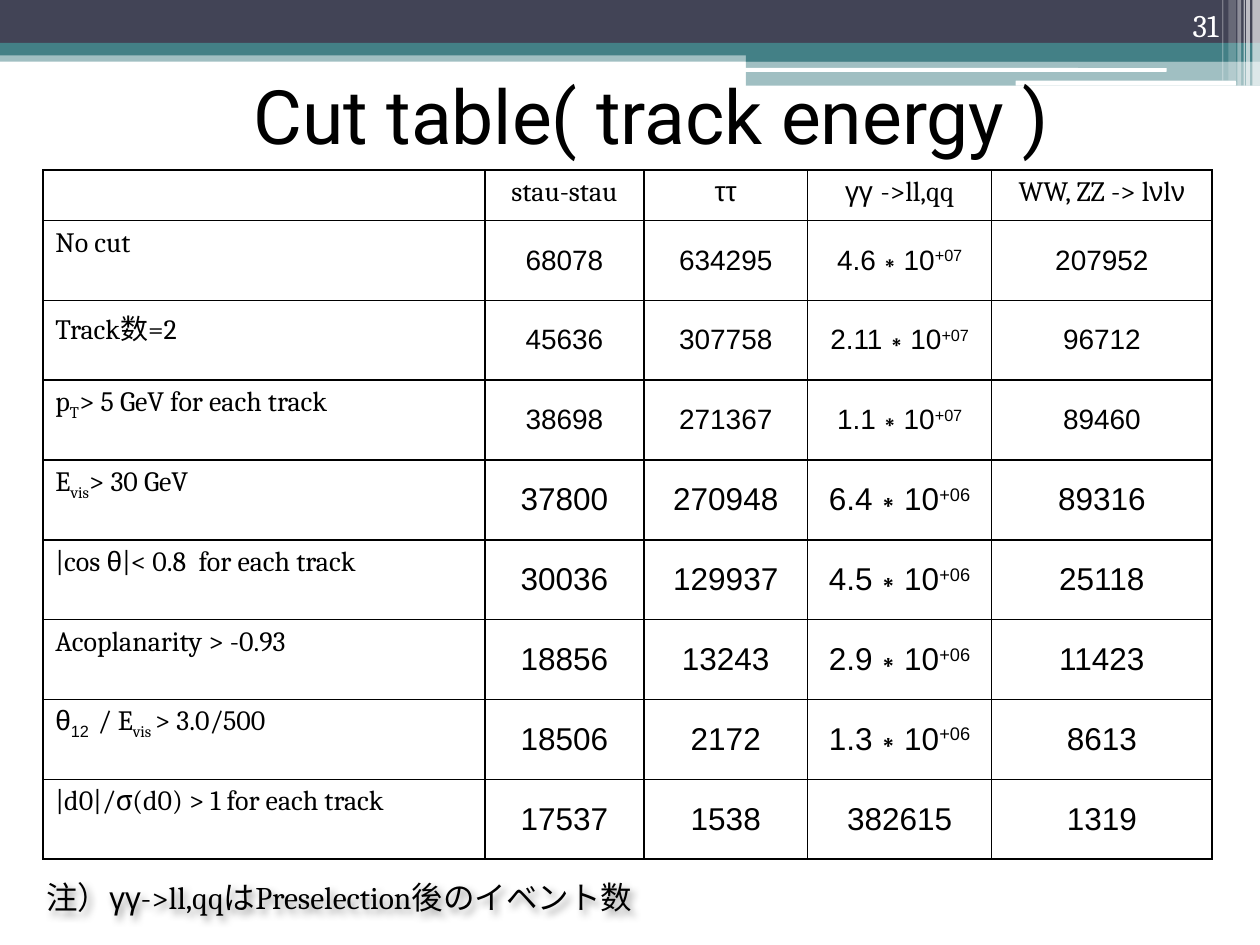
from lxml import etree
from pptx import Presentation
from pptx.dml.color import RGBColor
from pptx.enum.shapes import MSO_SHAPE as SHAPE
from pptx.enum.text import MSO_ANCHOR as ANCHOR, PP_ALIGN as ALIGN
from pptx.oxml import parse_xml
from pptx.oxml.ns import nsdecls, qn
from pptx.util import Inches, Pt

BLACK = RGBColor(0x00, 0x00, 0x00)
WHITE = RGBColor(0xFF, 0xFF, 0xFF)
SLATE = RGBColor(0x42, 0x44, 0x56)
TEAL = RGBColor(0x43, 0x80, 0x86)

SERIF, SANS, TITLE = "Cambria", "Arial", "Roboto"
SUB, SUP = -25, 30


class CutSlide:
    def __init__(self, prs):
        self.s = prs.slides.add_slide(prs.slide_layouts[6])

    def bar(self, x, y, w, h, color, alpha=100, kind=SHAPE.RECTANGLE):
        sp = self.s.shapes.add_shape(kind, Inches(x), Inches(y), Inches(w), Inches(h))
        sp.shadow.inherit = False
        sp.line.fill.background()
        sp.fill.solid()
        sp.fill.fore_color.rgb = color
        if alpha < 100:
            clr = sp._element.spPr.find(".//" + qn("a:srgbClr"))
            etree.SubElement(clr, qn("a:alpha")).set("val", str(alpha * 1000))

    def fill_text(self, tf, runs, size, font=SERIF, align=ALIGN.LEFT, color=BLACK):
        """Runs are (text, font or None, baseline) tuples, or one plain string."""
        p = tf.paragraphs[0]
        p.alignment = align
        p.font.size, p.font.name, p.font.color.rgb = Pt(size), font, color
        for text, own_font, base in [(runs, None, 0)] if isinstance(runs, str) else runs:
            r = p.add_run()
            r.text = text
            if own_font:
                r.font.name = own_font
            if base:
                r.font._element.set("baseline", str(base * 1000))

    def text(self, x, y, w, h, runs, size, anchor=ANCHOR.MIDDLE, **style):
        sp = self.s.shapes.add_textbox(Inches(x), Inches(y), Inches(w), Inches(h))
        tf = sp.text_frame
        tf.word_wrap = True
        tf.vertical_anchor = anchor
        self.fill_text(tf, runs, size, **style)
        return sp

    def soft_shadow(self, sp):
        sp._element.spPr.append(parse_xml(
            f'<a:effectLst {nsdecls("a")}><a:outerShdw blurRad="50800" dist="38100" '
            'dir="2700000"><a:srgbClr val="000000"><a:alpha val="40000"/></a:srgbClr>'
            '</a:outerShdw></a:effectLst>'))

    def table(self, x, y, widths, heights):
        frame = self.s.shapes.add_table(
            len(heights), len(widths), Inches(x), Inches(y),
            Inches(sum(widths)), Inches(sum(heights)))
        table = frame.table
        table.first_row = table.horz_banding = False
        for col, w in zip(table.columns, widths):
            col.width = Inches(w)
        for row, h in zip(table.rows, heights):
            row.height = Inches(h)
        for cell in table.iter_cells():
            tc_pr = cell._tc.get_or_add_tcPr()
            for side in ("lnL", "lnR", "lnT", "lnB"):
                tc_pr.append(parse_xml(
                    f'<a:{side} {nsdecls("a")} w="12700"><a:solidFill>'
                    f'<a:srgbClr val="{BLACK}"/></a:solidFill></a:{side}>'))
            cell.fill.background()
        return table

    def cell(self, cell, runs, size, anchor=ANCHOR.TOP, **style):
        cell.vertical_anchor = anchor
        self.fill_text(cell.text_frame, runs, size, **style)


def power(mantissa, exponent):
    return [(f"{mantissa}∗10", None, 0), (exponent, None, SUP)]


HEADERS = [
    "",
    "stau-stau",
    [("ττ", SANS, 0)],
    [("γγ ", SANS, 0), ("->ll,qq", None, 0)],
    [("WW, ZZ -> l", None, 0), ("ν", SANS, 0), ("l", None, 0), ("ν", SANS, 0)],
]
CUTS = [
    ("No cut", "68078", "634295", power("4.6", "+07"), "207952"),
    ("Track数=2", "45636", "307758", power("2.11", "+07"), "96712"),
    ([("p", None, 0), ("T", None, SUB), ("> 5 GeV for each track", None, 0)],
     "38698", "271367", power("1.1", "+07"), "89460"),
    ([("E", None, 0), ("vis", None, SUB), ("> 30 GeV", None, 0)],
     "37800", "270948", power("6.4", "+06"), "89316"),
    ([("|cos ", None, 0), ("θ", SANS, 0), ("|< 0.8  for each track", None, 0)],
     "30036", "129937", power("4.5", "+06"), "25118"),
    ("Acoplanarity > -0.93", "18856", "13243", power("2.9", "+06"), "11423"),
    ([("θ", SANS, 0), ("12  ", SANS, SUB), ("/ E", None, 0),
      ("vis ", None, SUB), ("> 3.0/500", None, 0)],
     "18506", "2172", power("1.3", "+06"), "8613"),
    ("|d0|/σ(d0) > 1 for each track", "17537", "1538", "382615", "1319"),
]


def main():
    prs = Presentation()
    prs.slide_width, prs.slide_height = Inches(10), Inches(7.5)
    slide = CutSlide(prs)

    # Header bands
    slide.bar(0, 0.4, 10, 0.09, TEAL, 50)
    slide.bar(0, 0, 10, 0.34, SLATE)
    slide.bar(0, 0.34, 10, 0.1, TEAL)
    slide.bar(5.92, 0.39, 4.08, 0.1, TEAL)
    slide.bar(5.92, 0.48, 4.08, 0.2, TEAL, 50)
    slide.bar(5.91, 0.54, 3.35, 0.03, WHITE, kind=SHAPE.ROUNDED_RECTANGLE)
    slide.bar(8.06, 0.64, 1.75, 0.04, WHITE, kind=SHAPE.ROUNDED_RECTANGLE)

    # Translucent stripes at the right edge
    for x, w, h, alpha in [(9.94, 0.06, 0.68, 65), (9.89, 0.03, 0.68, 65),
                           (9.87, 0.01, 0.68, 60), (9.82, 0.03, 0.68, 40),
                           (9.75, 0.06, 0.64, 20), (9.7, 0.01, 0.64, 30)]:
        slide.bar(x, 0, w, h, WHITE, alpha)

    # Title
    slide.text(0.67, 0.28, 9, 1.25, "Cut table( track energy )", 42.9,
               font=TITLE, align=ALIGN.CENTER)

    # Cut table: the event counts grow to 18 pt from the fourth cut on
    header_h = 0.36
    row_h = (5.43 - header_h) / len(CUTS)
    table = slide.table(0.34, 1.35, [3.51, 1.26, 1.3, 1.46, 1.75],
                        [header_h] + [row_h] * len(CUTS))
    for col, header in enumerate(HEADERS):
        slide.cell(table.cell(0, col), header, 16, align=ALIGN.CENTER)
    for row, (cut, *counts) in enumerate(CUTS, 1):
        slide.cell(table.cell(row, 0), cut, 16)
        for col, count in enumerate(counts, 1):
            slide.cell(table.cell(row, col), count, 16 if row < 4 else 18,
                       ANCHOR.MIDDLE, font=SANS, align=ALIGN.CENTER)

    # Page number and footnote
    slide.text(8.94, 0, 0.83, 0.4, "31", 18, ANCHOR.BOTTOM,
               align=ALIGN.RIGHT, color=WHITE)
    note = slide.text(0.27, 6.85, 5.92, 0.54, [
        ("注）", None, 0), ("γγ", SANS, 0),
        ("->ll,qqはPreselection後のイベント数", None, 0)], 18)
    slide.soft_shadow(note)

    prs.save("out.pptx")


if __name__ == "__main__":
    main()
